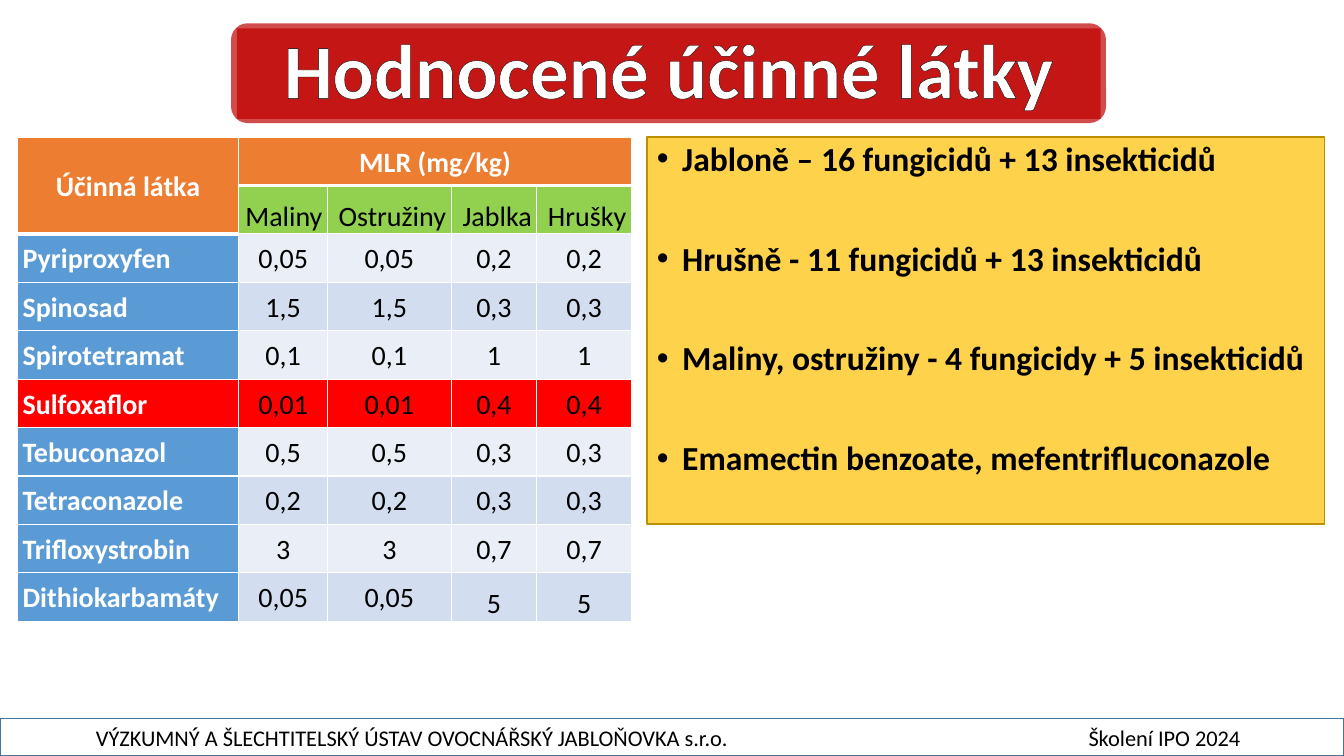
from lxml import etree
from pptx import Presentation
from pptx.dml.color import RGBColor
from pptx.enum.shapes import MSO_SHAPE
from pptx.enum.text import MSO_ANCHOR, MSO_AUTO_SIZE, PP_ALIGN
from pptx.oxml.ns import qn
from pptx.util import Pt

RECTANGLE, ROUNDED = MSO_SHAPE.RECTANGLE, MSO_SHAPE.ROUNDED_RECTANGLE
LEFT, CENTER, RIGHT = PP_ALIGN.LEFT, PP_ALIGN.CENTER, PP_ALIGN.RIGHT
TOP, MIDDLE, BOTTOM = MSO_ANCHOR.TOP, MSO_ANCHOR.MIDDLE, MSO_ANCHOR.BOTTOM


class Theme:
    font = "Calibri"
    white, black = "FFFFFF", "000000"
    banner = "C00000"
    panel, panel_line = "FFC000", "BD8E00"
    footer_line = "43739E"
    header, crop, substance, alert = "ED7D31", "92D050", "5B9BD5", "FF0000"
    bands = ("EAEFF7", "D2DEEF")
    title_size, bullet_size, table_size, footer_size = 55, 24, 20, 16


def paint(shape, color, opacity=100):
    """Fill a shape with a solid colour, see-through below 100 percent."""
    shape.fill.solid()
    shape.fill.fore_color.rgb = RGBColor.from_string(color)
    if opacity < 100:
        solid = shape._element.spPr.find(qn("a:solidFill"))
        etree.SubElement(solid[0], qn("a:alpha"), val=str(opacity * 1000))


def style(paragraph, size, color, bold=False, align=LEFT, spacing=1.0):
    paragraph.alignment = align
    paragraph.line_spacing = spacing
    for span in paragraph.runs:
        span.font.name = Theme.font
        span.font.size = Pt(size)
        span.font.bold = bold
        span.font.color.rgb = RGBColor.from_string(color)


deck = Presentation()
deck.slide_width, deck.slide_height = Pt(960), Pt(540)
page = deck.slides.add_slide(deck.slide_layouts[5])

# Title banner
title = page.shapes.title
title.left, title.top, title.width, title.height = Pt(169.2), Pt(20.2), Pt(617), Pt(64.8)
paint(title, Theme.banner, 70)
title_frame = title.text_frame
title_frame.text = "Hodnocené účinné látky"
title_frame.auto_size = MSO_AUTO_SIZE.NONE
title_frame.vertical_anchor = MIDDLE
title_frame.margin_top = title_frame.margin_bottom = 0
style(title_frame.paragraphs[0], Theme.title_size, Theme.white, True, CENTER, 0.9)
outline = etree.Element(qn("a:ln"), w=str(Pt(0.75)))
outline_fill = etree.SubElement(outline, qn("a:solidFill"))
etree.SubElement(outline_fill, qn("a:srgbClr"), val=Theme.black)
title_frame.paragraphs[0].runs[0].font._element.insert(0, outline)

banner = page.shapes.add_shape(ROUNDED, Pt(165), Pt(16.6), Pt(625), Pt(71.3))
banner.shadow.inherit = False
paint(banner, Theme.banner, 70)
banner.line.fill.background()
title._element.addprevious(banner._element)

# Panel with the counts
panel = page.shapes.add_shape(RECTANGLE, Pt(462.2), Pt(97.9), Pt(483.8), Pt(276.5))
panel.shadow.inherit = False
paint(panel, Theme.panel, 70)
panel.line.color.rgb = RGBColor.from_string(Theme.panel_line)
panel.line.width = Pt(1)
panel.text_frame.word_wrap = True
panel.text_frame.vertical_anchor = TOP
panel.text_frame.text = "\n".join([
    "Jabloně – 16 fungicidů + 13 insekticidů",
    "Hrušně - 11 fungicidů + 13 insekticidů",
    "Maliny, ostružiny - 4 fungicidy + 5 insekticidů",
    "Emamectin benzoate, mefentrifluconazole",
])
for index, paragraph in enumerate(panel.text_frame.paragraphs):
    properties = paragraph._p.get_or_add_pPr()
    properties.set("marL", str(Pt(18)))
    properties.set("indent", str(-Pt(18)))
    etree.SubElement(properties, qn("a:buFont"), typeface="Arial")
    etree.SubElement(properties, qn("a:buChar"), char="•")
    style(paragraph, Theme.bullet_size, Theme.black, True, LEFT, 0.9)
    paragraph.space_before = Pt(45.5 if index else 0)

# Table of residue limits
rows = [
    ("Účinná látka", "MLR (mg/kg)", "", "", ""),
    ("", "Maliny", "Ostružiny", "Jablka", "Hrušky"),
    ("Pyriproxyfen", "0,05", "0,05", "0,2", "0,2"),
    ("Spinosad", "1,5", "1,5", "0,3", "0,3"),
    ("Spirotetramat", "0,1", "0,1", "1", "1"),
    ("Sulfoxaflor", "0,01", "0,01", "0,4", "0,4"),
    ("Tebuconazol", "0,5", "0,5", "0,3", "0,3"),
    ("Tetraconazole", "0,2", "0,2", "0,3", "0,3"),
    ("Trifloxystrobin", "3", "3", "0,7", "0,7"),
    ("Dithiokarbamáty", "0,05", "0,05", "5", "5"),
]
column_widths = (158.1, 63.4, 88.3, 61.2, 67.5)
row_height = 34.6
limits = page.shapes.add_table(
    len(rows), len(column_widths), Pt(12.5), Pt(97.9),
    Pt(sum(column_widths)), Pt(row_height * len(rows))).table
for column, width in zip(limits.columns, column_widths):
    column.width = Pt(width)
for row in limits.rows:
    row.height = Pt(row_height)
limits.cell(0, 0).merge(limits.cell(1, 0))
limits.cell(0, 1).merge(limits.cell(0, 4))

for r, values in enumerate(rows):
    for c, value in enumerate(values):
        is_header = r == 0 or (r == 1 and c == 0)
        color, bold, align, anchor = Theme.black, False, CENTER, MIDDLE
        if is_header:
            fill, color, bold = Theme.header, Theme.white, True
        elif r == 1:
            fill, align, anchor = Theme.crop, RIGHT, BOTTOM
        elif c == 0:
            fill, color, bold, align = Theme.substance, Theme.white, True, LEFT
        else:
            fill = Theme.bands[r % 2]
        if values[0] == "Sulfoxaflor":
            fill = Theme.alert
        if value == "5":
            anchor = BOTTOM

        cell = limits.cell(r, c)
        cell.text = value
        cell.vertical_anchor = anchor
        cell.margin_left = cell.margin_right = Pt(3.6)
        cell.margin_top = cell.margin_bottom = 0
        style(cell.text_frame.paragraphs[0], Theme.table_size, color, bold, align, 1.07)
        for side in ("lnL", "lnR", "lnT", "lnB"):
            weight = 3 if is_header and side == "lnB" else 1
            border = etree.SubElement(cell._tc.get_or_add_tcPr(), qn("a:" + side), w=str(Pt(weight)))
            border_fill = etree.SubElement(border, qn("a:solidFill"))
            etree.SubElement(border_fill, qn("a:srgbClr"), val=Theme.white)
        cell.fill.solid()
        cell.fill.fore_color.rgb = RGBColor.from_string(fill)

# Footer: organiser on the left, event at a tab stop
footer = page.shapes.add_shape(RECTANGLE, Pt(0), Pt(513.4), Pt(960), Pt(26.6))
footer.shadow.inherit = False
paint(footer, Theme.white)
footer.line.color.rgb = RGBColor.from_string(Theme.footer_line)
footer.line.width = Pt(1)
footer_frame = footer.text_frame
footer_frame.word_wrap = True
footer_frame.vertical_anchor = MIDDLE
footer_frame.margin_left = Pt(68.5)
footer_frame.text = "VÝZKUMNÝ A ŠLECHTITELSKÝ ÚSTAV OVOCNÁŘSKÝ JABLOŇOVKA s.r.o.\tŠkolení IPO 2024"
footer_line = footer_frame.paragraphs[0]
tabs = etree.SubElement(footer_line._p.get_or_add_pPr(), qn("a:tabLst"))
etree.SubElement(tabs, qn("a:tab"), pos=str(Pt(709)), algn="l")
style(footer_line, Theme.footer_size, Theme.black)

deck.save("out.pptx")
